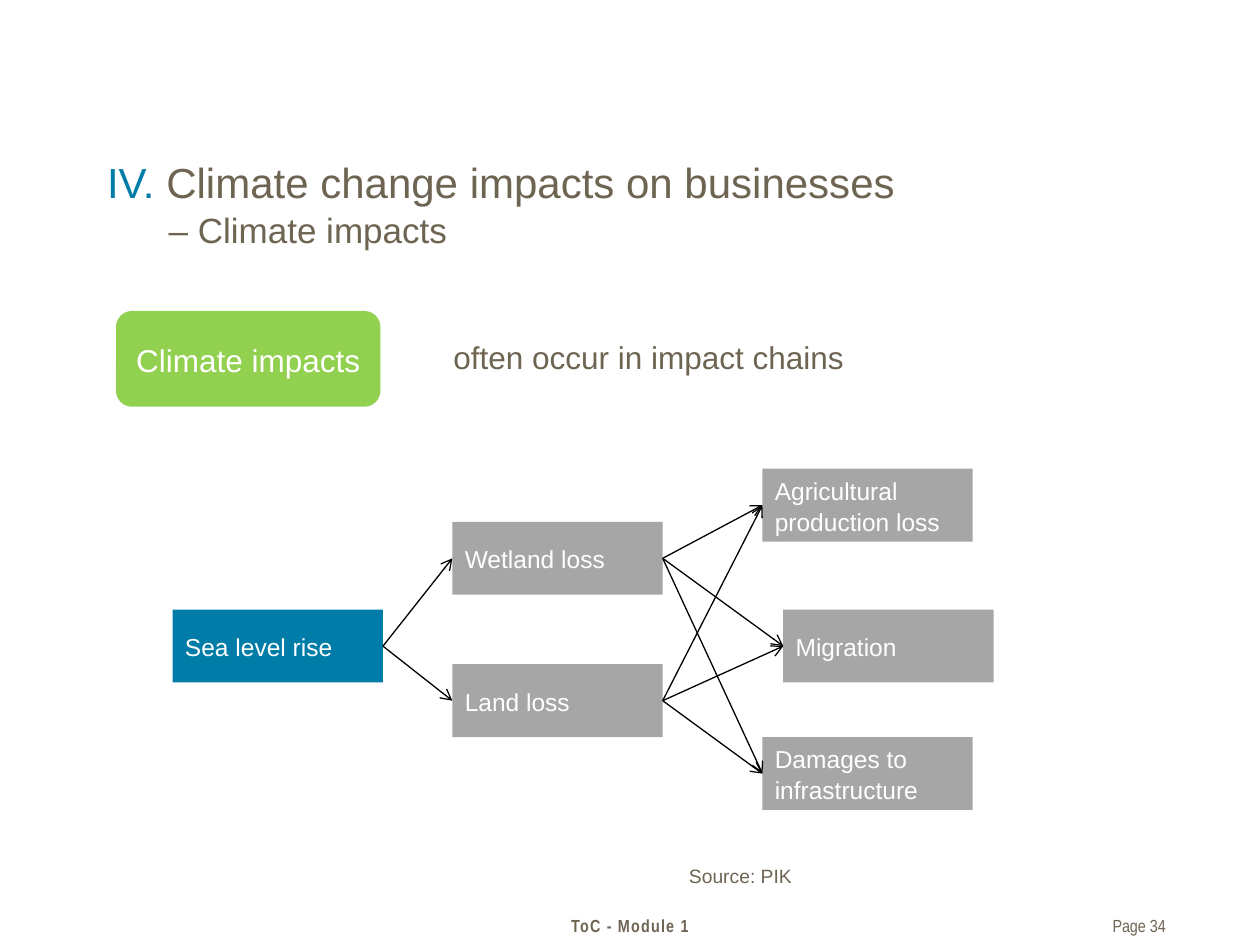
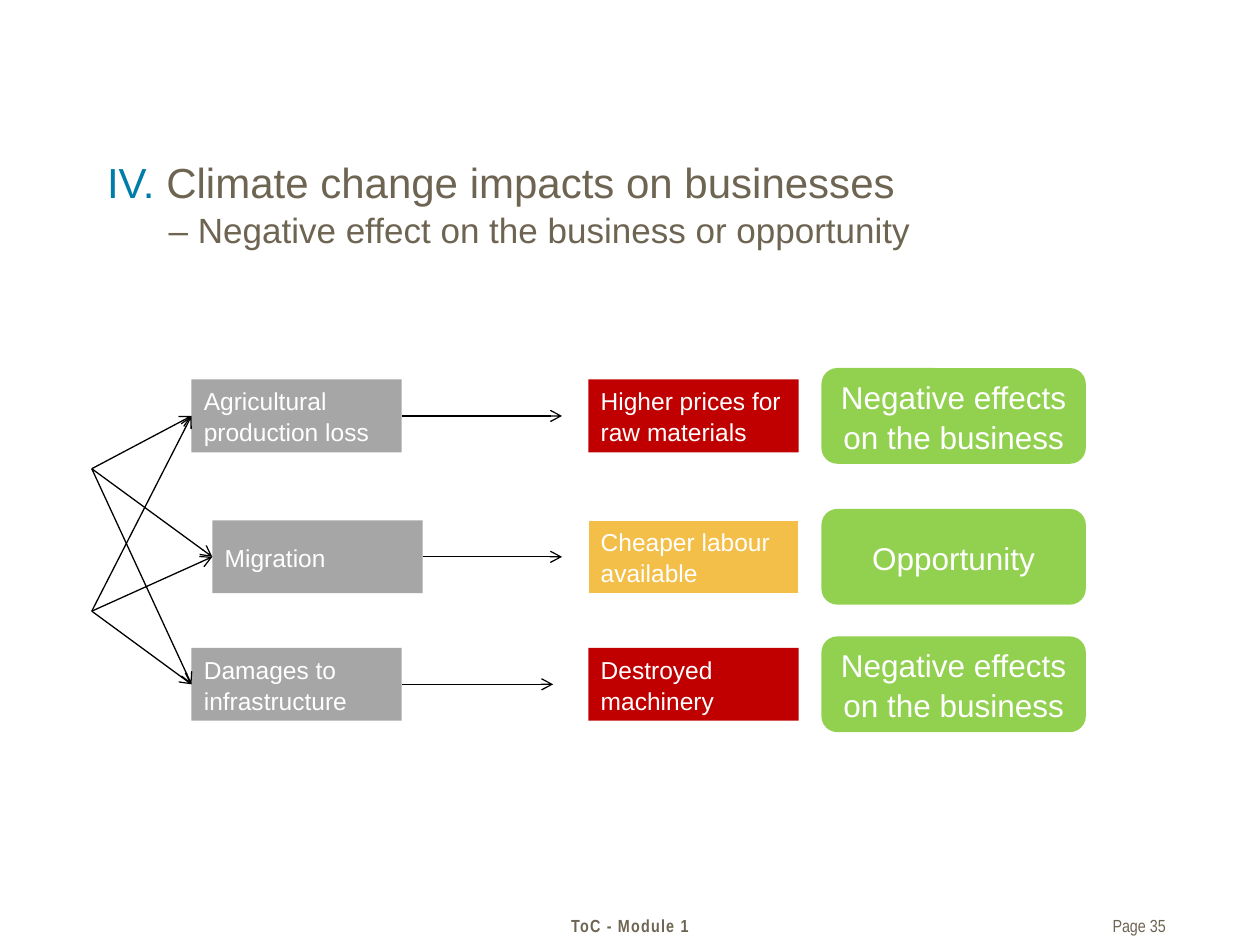
from dataclasses import dataclass
from itertools import product

from lxml.etree import SubElement
from pptx import Presentation
from pptx.dml.color import RGBColor as Rgb
from pptx.enum.shapes import MSO_CONNECTOR as Link, MSO_SHAPE as Shape
from pptx.enum.text import MSO_ANCHOR as Anchor, PP_ALIGN as Align
from pptx.oxml.ns import qn
from pptx.util import Cm, Pt


@dataclass(frozen=True)
class Theme:
    text: str = "6E6452"
    white: str = "FFFFFF"
    black: str = "000000"
    blue: str = "007CA8"
    grey: str = "A6A6A6"
    green: str = "92D050"
    red: str = "C00000"
    amber: str = "F3BF49"
    body_font: str = "Arial"
    footer_font: str = "Arial Narrow"
    title_size: int = 24
    subtitle_size: int = 20
    key_size: int = 18
    step_size: int = 14
    source_size: int = 11
    footer_size: int = 10
    line_spacing: float = 1.05
    line_width: float = 0.75


THEME = Theme()
LEFT, RIGHT = 1, 3
STEP_W, STEP_H = 4.24, 1.47
KEY_W, KEY_H = 5.33, 1.93
IMPACTS = [
    ("Agricultural production loss", 0, 0),
    ("Migration", 0.42, 2.84),
    ("Damages to infrastructure", 0, 5.41),
]


class Deck:
    def __init__(self, theme):
        self.theme = theme
        self.prs = Presentation()
        self.prs.slide_width, self.prs.slide_height = Cm(25.4), Cm(19.05)
        self.slide = None

    def start(self, subtitle, page):
        t = self.theme
        self.slide = self.prs.slides.add_slide(self.prs.slide_layouts[6])
        heading = self.text_box(1.91, 2.98, 21.59, 2.49)
        indent = heading._p.get_or_add_pPr()
        indent.set("marL", str(Cm(1.24)))
        indent.set("indent", str(-Cm(1.24)))
        self.run(heading, "IV. ", t.title_size, t.blue)
        self.run(heading, "Climate change impacts on businesses", t.title_size)
        heading.add_line_break()
        self.run(heading, f"– {subtitle}", t.subtitle_size)

        module = self.text_box(7.95, 18.29, 9.5, 0.69, Align.CENTER)
        name = self.run(module, "ToC - Module 1", t.footer_size, font=t.footer_font)
        name.font.bold = True
        name._r.get_or_add_rPr().set("spc", "70")
        number = self.text_box(20.93, 18.29, 2.57, 0.69, Align.RIGHT, right_inset=0)
        self.run(number, f"Page {page}", t.footer_size, font=t.footer_font)

    def run(self, paragraph, text, size, color=None, font=None):
        run = paragraph.add_run()
        run.text = text
        run.font.size = Pt(size)
        run.font.name = font or self.theme.body_font
        run.font.color.rgb = Rgb.from_string(color or self.theme.text)
        return run

    def paragraph(self, frame, align):
        frame.word_wrap = True
        paragraph = frame.paragraphs[0]
        paragraph.alignment = align
        paragraph.line_spacing = self.theme.line_spacing
        return paragraph

    def text_box(self, x, y, w, h, align=Align.LEFT, right_inset=0.25):
        box = self.slide.shapes.add_textbox(Cm(x), Cm(y), Cm(w), Cm(h))
        box.text_frame.margin_right = Cm(right_inset)
        return self.paragraph(box.text_frame, align)

    def note(self, text, x, y, w, h, size):
        self.run(self.text_box(x, y, w, h), text, size)

    def block(self, kind, text, x, y, w, h, fill, size, align, border=None):
        block = self.slide.shapes.add_shape(kind, Cm(x), Cm(y), Cm(w), Cm(h))
        block.shadow.inherit = False
        block.fill.solid()
        block.fill.fore_color.rgb = Rgb.from_string(fill)
        if border:
            block.line.color.rgb = Rgb.from_string(border)
            block.line.width = Pt(self.theme.line_width)
        else:
            block.line.fill.background()
        block.text_frame.vertical_anchor = Anchor.MIDDLE
        paragraph = self.paragraph(block.text_frame, align)
        self.run(paragraph, text, size, self.theme.white)
        return block

    def step(self, text, x, y, fill, border=None):
        return self.block(Shape.RECTANGLE, text, x, y, STEP_W, STEP_H, fill,
                          self.theme.step_size, Align.LEFT, border)

    def key(self, text, x, y):
        key = self.block(Shape.ROUNDED_RECTANGLE, text, x, y, KEY_W, KEY_H,
                         self.theme.green, self.theme.key_size, Align.CENTER)
        frame = key.text_frame
        frame.margin_left = frame.margin_right = 0
        frame.margin_top = frame.margin_bottom = 0

    def impacts(self, x, y):
        return [self.step(text, x + dx, y + dy, self.theme.grey)
                for text, dx, dy in IMPACTS]

    def arrow(self, start, end):
        ends = [end_point(start, RIGHT), end_point(end, LEFT)]
        arrow = self.slide.shapes.add_connector(Link.STRAIGHT, *ends[0], *ends[1])
        if not isinstance(start, tuple):
            arrow.begin_connect(start, RIGHT)
        if not isinstance(end, tuple):
            arrow.end_connect(end, LEFT)
        arrow.line.color.rgb = Rgb.from_string(self.theme.black)
        arrow.line.width = Pt(self.theme.line_width)
        SubElement(arrow.line._get_or_add_ln(), qn("a:tailEnd"), type="arrow")
        SubElement(arrow._element.spPr, qn("a:effectLst"))

    def fan(self, starts, ends):
        for start, end in product(starts, ends):
            self.arrow(start, end)


def end_point(place, side):
    if isinstance(place, tuple):
        return place
    x = place.left + (place.width if side == RIGHT else 0)
    return x, place.top + place.height // 2


def impact_chain(deck):
    t = deck.theme
    deck.start("Climate impacts", 34)
    deck.key("Climate impacts", 2.34, 6.27)
    deck.note("often occur in impact chains", 8.89, 6.65, 10.95, 1.02, t.key_size)
    deck.note("Source: PIK", 13.64, 17.27, 4.04, 0.74, t.source_size)
    sea_level = deck.step("Sea level rise", 3.48, 12.29, t.blue)
    losses = [deck.step(text, 9.12, y, t.grey)
              for text, y in [("Wetland loss", 10.52), ("Land loss", 13.39)]]
    impacts = deck.impacts(15.37, 9.45)
    deck.fan([sea_level], losses)
    deck.fan(losses, impacts)


def business_effects(deck):
    t = deck.theme
    top = 7.65
    deck.start("Negative effect on the business or opportunity", 35)
    impacts = deck.impacts(3.86, top)
    deck.fan([(Cm(1.85), Cm(y)) for y in (9.45, 12.32)], impacts)
    effects = [
        ("Higher prices for raw materials", t.red, None, 11.33,
         "Negative effects on the business"),
        ("Cheaper labour available", t.amber, t.white, 11.33, "Opportunity"),
        ("Destroyed machinery", t.red, None, 11.15,
         "Negative effects on the business"),
    ]
    for impact, (_, _, dy), effect in zip(impacts, IMPACTS, effects):
        text, fill, border, arrow_tip, verdict = effect
        y = top + dy
        deck.arrow(impact, (Cm(arrow_tip), end_point(impact, RIGHT)[1]))
        deck.step(text, 11.86, y, fill, border)
        deck.key(verdict, 16.56, y + (STEP_H - KEY_H) / 2)


def main():
    deck = Deck(THEME)
    impact_chain(deck)
    business_effects(deck)
    deck.prs.save("out.pptx")


if __name__ == "__main__":
    main()
